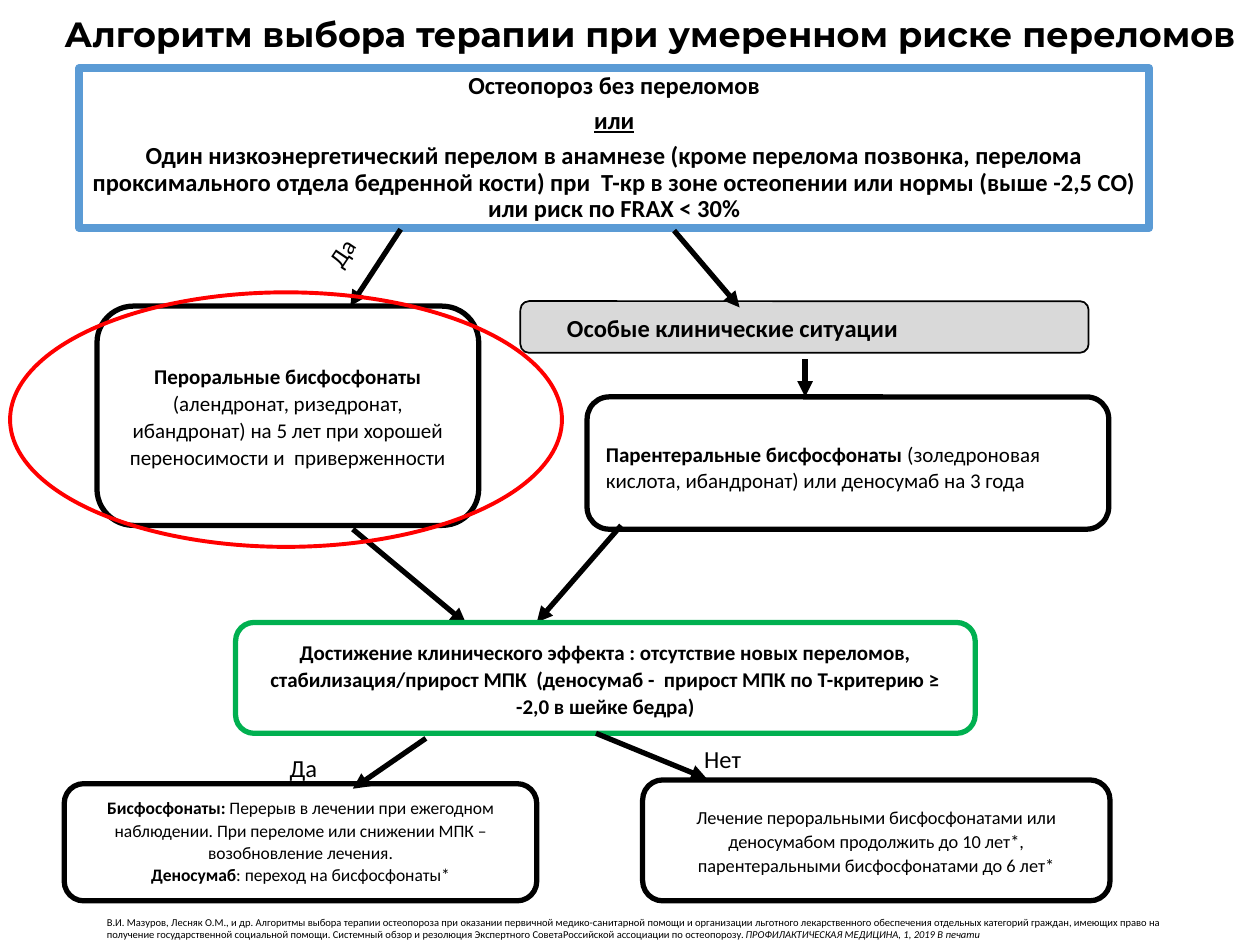
from lxml import etree
from pptx import Presentation
from pptx.dml.color import RGBColor
from pptx.enum import shapes as sh, text as tx
from pptx.oxml.ns import qn
from pptx.util import Inches, Pt

BLACK, WHITE, GREY = "000000", "FFFFFF", "D9D9D9"
BLUE, GREEN, RED = "5B9BD5", "00B050", "FF0000"
MID, TOP = tx.MSO_ANCHOR.MIDDLE, tx.MSO_ANCHOR.TOP
LEFT, MIDDLE = tx.PP_ALIGN.LEFT, tx.PP_ALIGN.CENTER
ROUND = sh.MSO_SHAPE.ROUNDED_RECTANGLE
FLAGS = {"b": "bold", "i": "italic", "u": "underline"}


def color(code):
    return RGBColor.from_string(code)


def place(box, x, y):
    """Turn a point inside the box into slide lengths."""
    return Inches(box[0] + x), Inches(box[1] + y)


def write(shape, paras, size, font="Calibri", align=LEFT, anchor=TOP,
          wrap=True, pad=(0.1, 0.05, 0.1, 0.05), **gaps):
    """Fill a shape with paragraphs, each a list of (text, flags) runs."""
    frame = shape.text_frame
    sides = ("margin_left", "margin_top", "margin_right", "margin_bottom")
    look = dict(zip(sides, map(Inches, pad)), word_wrap=wrap,
                vertical_anchor=anchor)
    for key, val in look.items():
        setattr(frame, key, val)
    for n, runs in enumerate(paras):
        para = frame.add_paragraph() if n else frame.paragraphs[0]
        for key, val in dict(gaps, alignment=align).items():
            setattr(para, key, val)
        for words, flags in runs:
            run = para.add_run()
            run.text = words
            style = {"name": font, "size": Pt(size)}
            style.update((FLAGS[flag], True) for flag in flags)
            for key, val in style.items():
                setattr(run.font, key, val)
            run.font.color.rgb = color(BLACK)


def node(slide, box, rect, kind=ROUND, fill=WHITE, edge=BLACK, width=3):
    x, y, w, h = rect
    shape = slide.shapes.add_shape(kind, *place(box, x, y),
                                   Inches(w), Inches(h))
    shape.shadow.inherit = False
    if fill:
        shape.fill.solid()
        shape.fill.fore_color.rgb = color(fill)
    else:
        shape.fill.background()
    shape.line.color.rgb = color(edge)
    shape.line.width = Pt(width)
    return shape


def label(slide, box, rect, paras, size, turn=0, **look):
    x, y, w, h = rect
    shape = slide.shapes.add_textbox(*place(box, x, y), Inches(w), Inches(h))
    shape.rotation = turn
    write(shape, paras, size, **look)


def arrow(slide, box, start, end):
    line = slide.shapes.add_connector(sh.MSO_CONNECTOR.STRAIGHT,
                                      *place(box, *start), *place(box, *end))
    line.line.color.rgb = color(BLACK)
    line.line.width = Pt(3)
    etree.SubElement(line.line._get_or_add_ln(), qn("a:tailEnd"),
                     type="triangle")
    etree.SubElement(line._element.spPr, qn("a:effectLst"))


def criteria(slide, box):
    shape = node(slide, box, (0, 0, *box[2:]), sh.MSO_SHAPE.RECTANGLE,
                 edge=BLUE, width=4.5)
    write(shape, [
        [("Остеопороз без переломов", "b")],
        [("или", "bu")],
        [("Один низкоэнергетический перелом в анамнезе (кроме перелома "
          "позвонка, перелома проксимального отдела бедренной кости) при  "
          "Т-кр в зоне остеопении или нормы (выше -2,5 СО) "
          "или риск по FRAX < 30%", "b")],
    ], 14, align=MIDDLE, anchor=MID, pad=[0.01] * 4,
        line_spacing=0.9, space_after=Pt(5))


def therapy(slide, box):
    oral = node(slide, box, (0.69, 0.61, 3.03, 1.74))
    write(oral, [[("Пероральные бисфосфонаты ", "b"),
                  ("(алендронат, ризедронат, ибандронат) на 5 лет при хорошей "
                   "переносимости и  приверженности", "")]],
          12, align=MIDDLE, anchor=MID, line_spacing=1.07)
    special = node(slide, box, (4.05, 0.57, 4.51, 0.41), fill=GREY, width=1)
    write(special, [[("Особые клинические ситуации", "b")]], 14,
          anchor=MID, pad=(0.35, 0.05, 0.1, 0.05), line_spacing=1.07)
    drip = node(slide, box, (4.58, 1.33, 4.14, 1.05))
    write(drip, [[("Парентеральные бисфосфонаты ", "b"),
                  ("(золедроновая кислота, ибандронат) или деносумаб "
                   "на 3 года", "")]],
          12, anchor=MID, pad=(0.1, 0.1, 0.1, 0.05), line_spacing=1.07)
    for start, end in [((3.1, 0), (2.7, 0.61)),
                       ((5.27, 0.01), (5.79, 0.62)),
                       ((6.31, 1.03), (6.31, 1.33)),
                       ((2.72, 2.38), (3.62, 3.13)),
                       ((4.85, 2.35), (4.18, 3.12))]:
        arrow(slide, box, start, end)
    label(slide, box, (2.42, 0.01, 0.44, 0.34), [[("Да", "")]], 14,
          turn=303.8, wrap=False)
    node(slide, box, (0, 0.5, 4.38, 2.02), sh.MSO_SHAPE.OVAL,
         fill=None, edge=RED, width=2.25)


def outcome(slide, box):
    look = dict(align=MIDDLE, line_spacing=1.07)
    goal = node(slide, box, (1.36, 0, 5.87, 0.88), edge=GREEN)
    write(goal, [[("Достижение клинического эффекта : отсутствие новых "
                   "переломов, стабилизация/прирост МПК  (деносумаб -  "
                   "прирост МПК по Т-критерию ≥ -2,0 в шейке бедра)", "b")]],
          12, anchor=MID, **look)
    pause = node(slide, box, (0, 1.28, 3.75, 0.93))
    write(pause, [
        [("Бисфосфонаты:", "b"),
         (" Перерыв в лечении при ежегодном наблюдении. При переломе или "
          "снижении МПК – возобновление лечения.", "")],
        [("Деносумаб", "b"), (": переход на бисфосфонаты*", "")],
    ], 10, **look)
    longer = node(slide, box, (4.59, 1.25, 3.71, 0.96))
    write(longer, [[("Лечение пероральными бисфосфонатами или деносумабом "
                     "продолжить до 10 лет*, парентеральными "
                     "бисфосфонатами до 6 лет*", "")]],
          10.5, anchor=MID, **look)
    arrow(slide, box, (2.87, 0.92), (2.29, 1.32))
    arrow(slide, box, (4.22, 0.88), (5.1, 1.24))
    label(slide, box, (1.69, 0.99, 0.5, 0.34), [[("Да", "")]], 14)
    label(slide, box, (4.98, 0.92, 0.69, 0.34), [[("Нет", "")]], 14)


def title(slide, box):
    label(slide, box, (0, 0, *box[2:]),
          [[("Алгоритм выбора терапии при умеренном риске переломов", "b")]],
          20, font="Montserrat", align=MIDDLE, anchor=MID, line_spacing=0.9)


def source(slide, box):
    label(slide, box, (0, 0, *box[2:]), [[
        ("В.И. Мазуров, Лесняк О.М., и др. Алгоритмы выбора терапии "
         "остеопороза при оказании первичной медико-санитарной помощи и "
         "организации льготного лекарственного обеспечения отдельных "
         "категорий граждан, имеющих право на получение государственной "
         "социальной помощи. Системный обзор и резолюция Экспертного "
         "СоветаРоссийской ассоциации по остеопорозу. ", ""),
        ("ПРОФИЛАКТИЧЕСКАЯ МЕДИЦИНА, 1, 2019 В печати", "i")]], 6)


def main():
    deck = Presentation()
    deck.slide_width, deck.slide_height = Inches(10), Inches(7.5)
    slide = deck.slides.add_slide(deck.slide_layouts[6])
    title(slide, (0.25, 0.05, 9.82, 0.48))
    criteria(slide, (0.63, 0.54, 8.49, 1.27))
    therapy(slide, (0.08, 1.82, 8.72, 3.13))
    outcome(slide, (0.51, 4.94, 8.3, 2.21))
    source(slide, (0.75, 7.22, 8.94, 0.3))
    deck.save("out.pptx")


if __name__ == "__main__":
    main()
